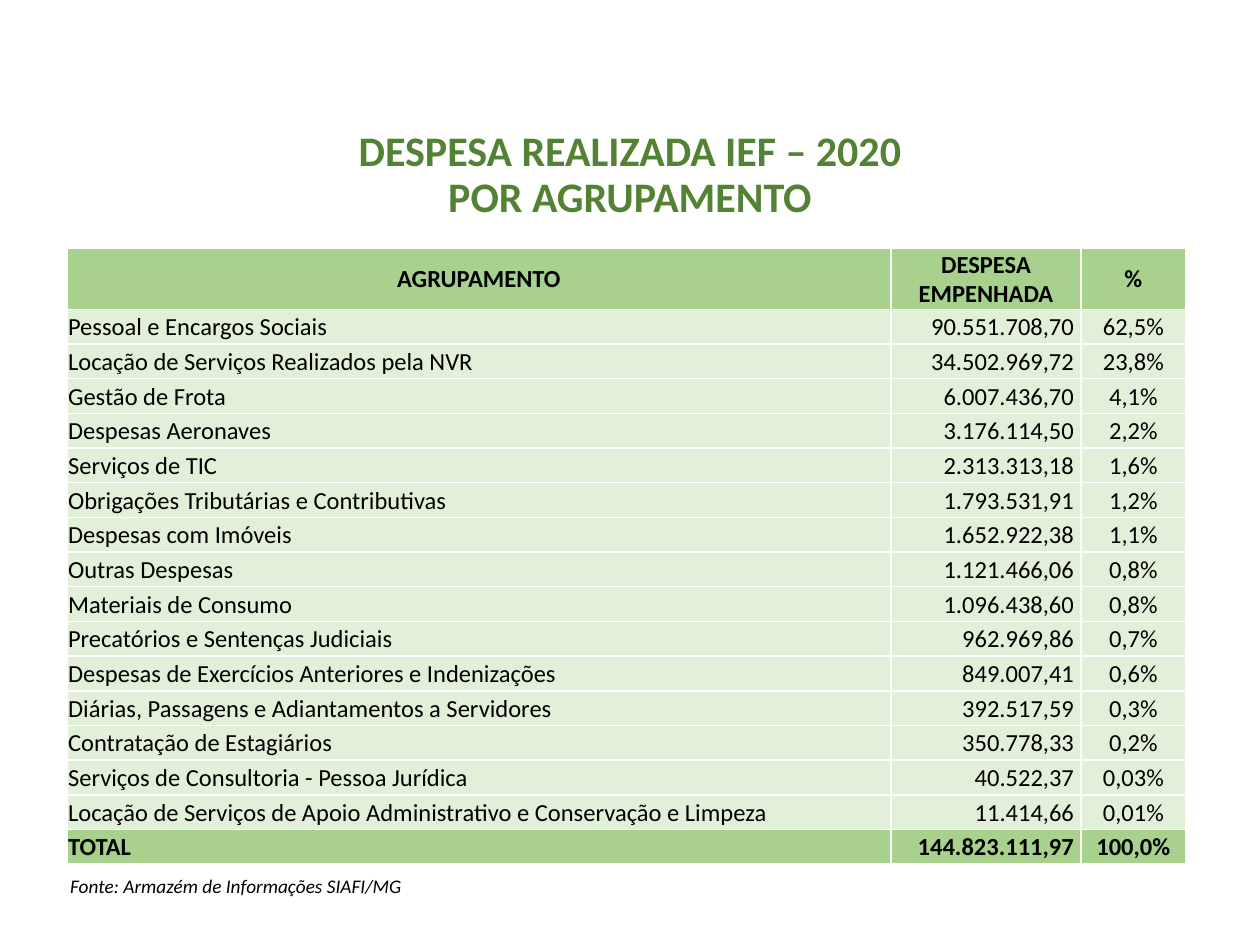
from lxml import etree
from pptx import Presentation
from pptx.dml.color import RGBColor
from pptx.enum.text import MSO_ANCHOR, MSO_AUTO_SIZE, PP_ALIGN
from pptx.oxml.ns import qn
from pptx.util import Pt

LEFT, CENTER, RIGHT = PP_ALIGN.LEFT, PP_ALIGN.CENTER, PP_ALIGN.RIGHT
MIDDLE = MSO_ANCHOR.MIDDLE
NO_AUTOFIT = MSO_AUTO_SIZE.NONE
TITLE_ONLY_LAYOUT = 5

HEADERS = ("AGRUPAMENTO", "DESPESA EMPENHADA", "%")
EXPENSES = (
    ("Pessoal e Encargos Sociais", "90.551.708,70", "62,5%"),
    ("Locação de Serviços Realizados pela NVR", "34.502.969,72", "23,8%"),
    ("Gestão de Frota", "6.007.436,70", "4,1%"),
    ("Despesas Aeronaves", "3.176.114,50", "2,2%"),
    ("Serviços de TIC", "2.313.313,18", "1,6%"),
    ("Obrigações Tributárias e Contributivas", "1.793.531,91", "1,2%"),
    ("Despesas com Imóveis", "1.652.922,38", "1,1%"),
    ("Outras Despesas", "1.121.466,06", "0,8%"),
    ("Materiais de Consumo", "1.096.438,60", "0,8%"),
    ("Precatórios e Sentenças Judiciais", "962.969,86", "0,7%"),
    ("Despesas de Exercícios Anteriores e Indenizações", "849.007,41", "0,6%"),
    ("Diárias, Passagens e Adiantamentos a Servidores", "392.517,59", "0,3%"),
    ("Contratação de Estagiários", "350.778,33", "0,2%"),
    ("Serviços de Consultoria - Pessoa Jurídica", "40.522,37", "0,03%"),
    ("Locação de Serviços de Apoio Administrativo e Conservação e Limpeza",
     "11.414,66", "0,01%"),
)
TOTAL = ("TOTAL", "144.823.111,97", "100,0%")


def color(hex_string):
    return RGBColor.from_string(hex_string)


class SlideBuilder:
    FONT = "Calibri"
    BLACK, WHITE, TITLE_GREEN = "000000", "FFFFFF", "548235"
    STRONG_GREEN, LIGHT_GREEN = "A9D18E", "E2F0D9"

    def __init__(self, slide):
        self.slide = slide

    def run(self, paragraph, text, size, hex_color=BLACK, bold=False, italic=False):
        run = paragraph.add_run()
        run.text = text
        font = run.font
        font.name, font.size = self.FONT, Pt(size)
        font.bold, font.italic = bold, italic
        font.color.rgb = color(hex_color)

    def frame(self, shape):
        """Prepare the text frame and return its first paragraph."""
        frame = shape.text_frame
        frame.word_wrap = True
        frame.auto_size = NO_AUTOFIT
        frame.vertical_anchor = MIDDLE
        return frame.paragraphs[0]

    def title(self, lines, left, top, width, height):
        shape = self.slide.shapes.title
        shape.left, shape.top = Pt(left), Pt(top)
        shape.width, shape.height = Pt(width), Pt(height)
        paragraph = self.frame(shape)
        paragraph.alignment = CENTER
        paragraph.line_spacing = 0.9
        for index, line in enumerate(lines):
            if index:
                paragraph.add_line_break()
            self.run(paragraph, line, 24, self.TITLE_GREEN, bold=True)

    def note(self, text, left, top, width, height):
        shape = self.slide.shapes.add_textbox(Pt(left), Pt(top), Pt(width), Pt(height))
        self.run(self.frame(shape), text, 11, italic=True)

    def borders(self, cell):
        properties = cell._tc.get_or_add_tcPr()
        for index, side in enumerate(("a:lnL", "a:lnR", "a:lnT", "a:lnB")):
            line = etree.Element(qn(side), w=str(Pt(1)))
            fill = etree.SubElement(line, qn("a:solidFill"))
            etree.SubElement(fill, qn("a:srgbClr"), val=self.WHITE)
            properties.insert(index, line)

    def cell(self, cell, text, alignment, strong):
        cell.fill.solid()
        cell.fill.fore_color.rgb = color(self.STRONG_GREEN if strong else self.LIGHT_GREEN)
        cell.vertical_anchor = MIDDLE
        cell.margin_left = cell.margin_top = Pt(0.7)
        cell.margin_right = Pt(4 if alignment == RIGHT else 0.7)
        cell.margin_bottom = Pt(0)
        paragraph = cell.text_frame.paragraphs[0]
        paragraph.alignment = alignment
        self.run(paragraph, text, 14, bold=strong)
        self.borders(cell)

    def table(self, rows, left, top, column_widths, header_height, row_height):
        heights = [header_height] + [row_height] * (len(rows) - 1)
        table = self.slide.shapes.add_table(
            len(rows), len(column_widths), Pt(left), Pt(top),
            Pt(sum(column_widths)), Pt(sum(heights))).table
        for column, width in zip(table.columns, column_widths):
            column.width = Pt(width)
        for row_index, (values, height) in enumerate(zip(rows, heights)):
            table.rows[row_index].height = Pt(height)
            strong = row_index in (0, len(rows) - 1)
            alignments = (LEFT, RIGHT, CENTER) if row_index else (CENTER,) * 3
            for column_index, (text, alignment) in enumerate(zip(values, alignments)):
                self.cell(table.cell(row_index, column_index), text, alignment, strong)


def main():
    presentation = Presentation()
    presentation.slide_width, presentation.slide_height = Pt(720), Pt(540)
    layout = presentation.slide_layouts[TITLE_ONLY_LAYOUT]
    builder = SlideBuilder(presentation.slides.add_slide(layout))
    builder.title(("DESPESA REALIZADA IEF – 2020", "POR AGRUPAMENTO"),
                  8.6, 75.6, 702.8, 49.7)
    builder.note("Fonte: Armazém de Informações SIAFI/MG", 33, 499, 572.4, 14.4)
    builder.table((HEADERS, *EXPENSES, TOTAL), 38.2, 142,
                  (470.9, 108.7, 59.8), 34.3, 19.83)
    presentation.save("out.pptx")


if __name__ == "__main__":
    main()
